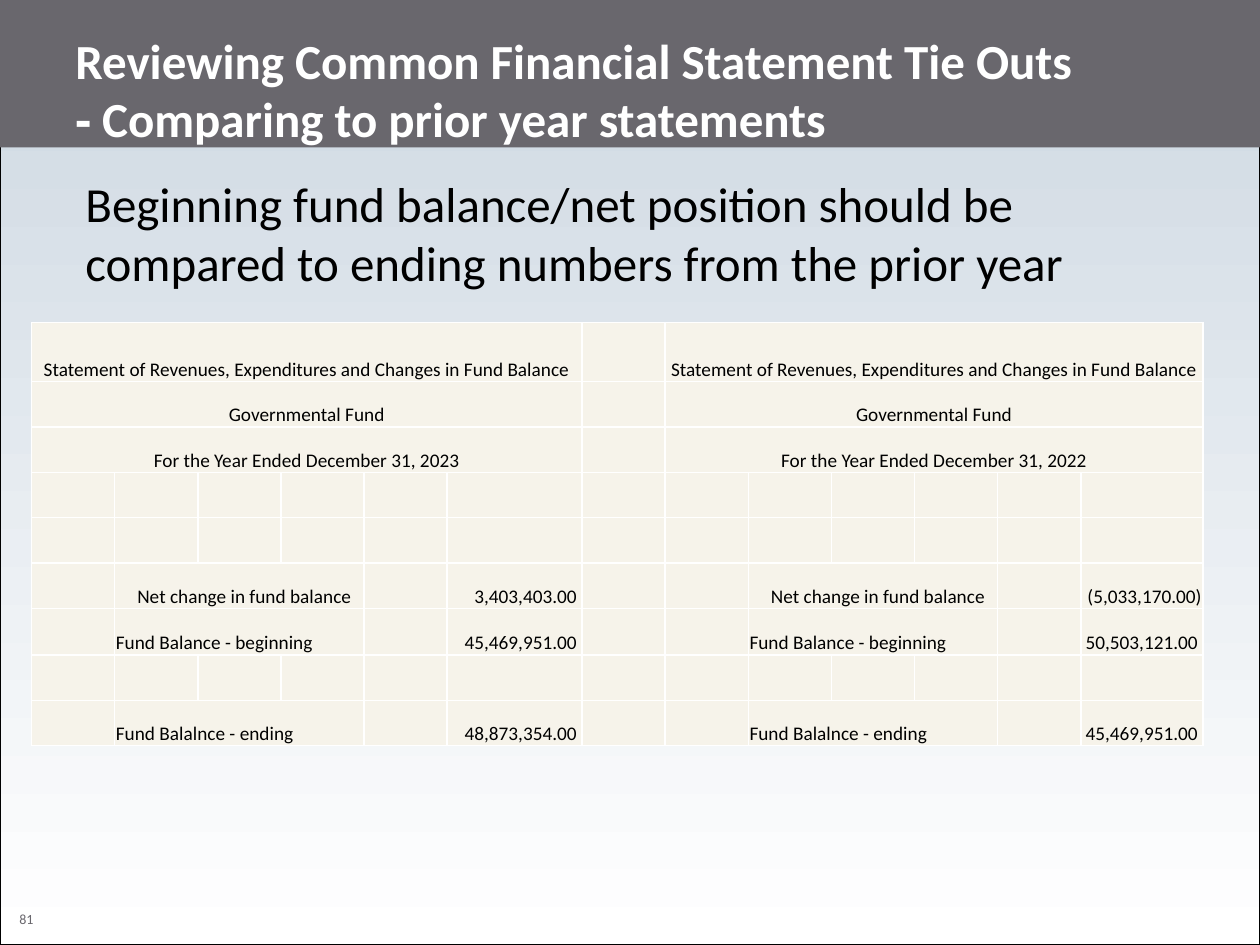
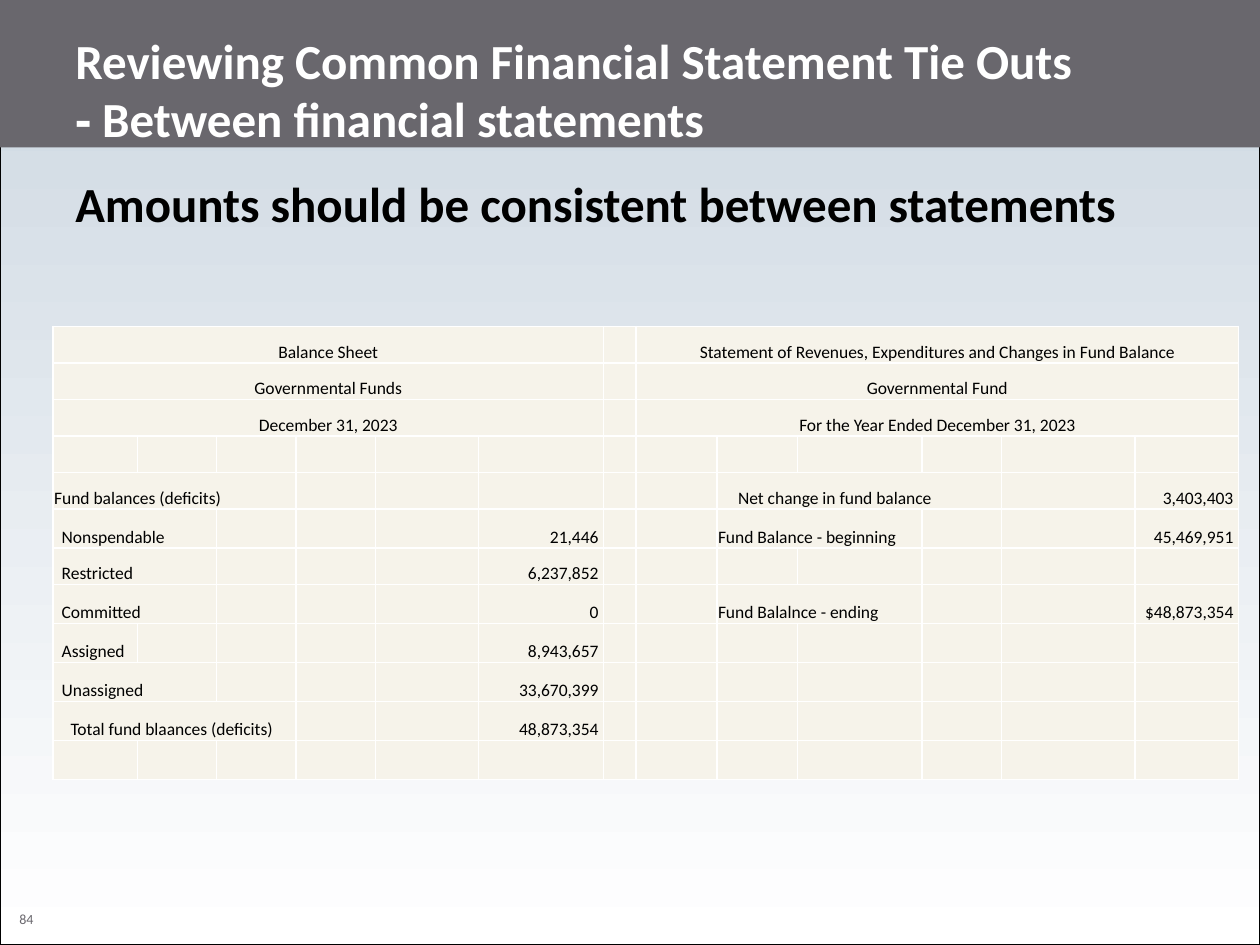
from lxml import etree
from pptx import Presentation
from pptx.dml.color import RGBColor
from pptx.enum.shapes import MSO_SHAPE as SHAPE
from pptx.enum.text import MSO_ANCHOR as ANCHOR, PP_ALIGN as ALIGN
from pptx.oxml import parse_xml
from pptx.oxml.ns import nsdecls, qn
from pptx.util import Inches, Pt

COLORS = {"sky": "CCD7E1", "white": "FFFFFF", "band": "69676D",
          "black": "000000", "cell": "F6F3EA"}
RGB = {name: RGBColor.from_string(value) for name, value in COLORS.items()}
FONT = "Calibri"
STATEMENT = "Statement of Revenues, Expenditures and Changes in Fund Balance"
HALF_COLS = 6  # columns of one statement; a spacer column divides the two


def style(p, size, color, bold=False, align=ALIGN.LEFT):
    """Format every run of a paragraph."""
    p.alignment = align
    for r in p.runs:
        r.font.name, r.font.size, r.font.bold = FONT, Pt(size), bold
        r.font.color.rgb = RGB[color]


def add_text(s, box, text, size, color, bold=False, align=ALIGN.LEFT, anchor=ANCHOR.TOP):
    tf = s.shapes.add_textbox(*map(Inches, box)).text_frame
    tf.word_wrap = True
    tf.vertical_anchor = anchor
    p = tf.paragraphs[0]
    p.text = text
    style(p, size, color, bold, align)


# A statement is its headings and its lines; a line is
# (row, first column, columns spanned, label, indent, amount).
slides = [
    {
        "number": "81",
        "subtitle": "Comparing to prior year statements",
        "message": "Beginning fund balance/net position should be "
                   "compared to ending numbers from the prior year",
        "message_left": 0.58, "message_bold": False,
        "table_at": (0.25, 2.56), "size": 11,
        "cols": [0.66] * 5 + [1.07] + [0.66] * 6 + [0.97],
        "rows": [0.47] + [0.36] * 5 + [0.37] + [0.36] * 2,
        "statements": [
            ([STATEMENT, "Governmental Fund", "For the Year Ended December 31, 2023"],
             [(5, 1, 3, "Net change in fund balance", 0.17, "3,403,403.00"),
              (6, 1, 3, "Fund Balance - beginning", 0, "45,469,951.00"),
              (8, 1, 3, "Fund Balalnce - ending", 0, "48,873,354.00")]),
            ([STATEMENT, "Governmental Fund", "For the Year Ended December 31, 2022"],
             [(5, 1, 3, "Net change in fund balance", 0.17, "(5,033,170.00)"),
              (6, 1, 3, "Fund Balance - beginning", 0, "50,503,121.00"),
              (8, 1, 3, "Fund Balalnce - ending", 0, "45,469,951.00")]),
        ],
    },
    {
        "number": "84",
        "subtitle": "Between financial statements",
        "message": "Amounts should be consistent between statements",
        "message_left": 0.5, "message_bold": True,
        "table_at": (0.42, 2.59), "size": 10,
        "cols": [0.67, 0.63, 0.63, 0.63, 0.82, 0.99, 0.26,
                 0.64, 0.64, 0.99, 0.63, 1.06, 0.82],
        "rows": [0.29] * 5 + [0.31, 0.29] + [0.31] * 5,
        "statements": [
            (["Balance Sheet", "Governmental Funds", "December 31, 2023"],
             [(4, 0, 3, "Fund balances (deficits)", 0, ""),
              (5, 0, 2, "Nonspendable", 0.06, "21,446"),
              (6, 0, 2, "Restricted", 0.06, "6,237,852"),
              (7, 0, 2, "Committed", 0.06, "0"),
              (8, 0, 1, "Assigned", 0.06, "8,943,657"),
              (9, 0, 2, "Unassigned", 0.06, "33,670,399"),
              (10, 0, 3, "Total fund blaances (deficits)", 0.13, "48,873,354")]),
            ([STATEMENT, "Governmental Fund", "For the Year Ended December 31, 2023"],
             [(4, 1, 3, "Net change in fund balance", 0.16, "3,403,403"),
              (5, 1, 2, "Fund Balance - beginning", 0, "45,469,951"),
              (7, 1, 2, "Fund Balalnce - ending", 0, "$48,873,354")]),
        ],
    },
]

prs = Presentation()
prs.slide_width, prs.slide_height = Inches(10), Inches(7.5)

for data in slides:
    s = prs.slides.add_slide(prs.slide_layouts[6])

    # Background, frame, title band and page number
    fill = s.background.fill
    fill.gradient()
    fill.gradient_angle = 270
    for stop, name, position in zip(fill.gradient_stops, ("sky", "white"), (0, 1)):
        stop.color.rgb = RGB[name]
        stop.position = position

    frame = s.shapes.add_shape(SHAPE.RECTANGLE, 0, 0, prs.slide_width, prs.slide_height)
    frame.shadow.inherit = False
    frame.fill.background()
    frame.line.color.rgb = RGB["black"]
    frame.line.width = Pt(0.75)

    band = s.shapes.add_shape(SHAPE.RECTANGLE, 0, 0, prs.slide_width, Inches(1.17))
    band.shadow.inherit = False
    band.fill.solid()
    band.fill.fore_color.rgb = RGB["band"]
    band.line.fill.background()

    add_text(s, (0, 7.18, 0.42, 0.24), data["number"], 8, "band", align=ALIGN.CENTER)
    add_text(s, (0.5, 0.33, 9, 0.75),
             "Reviewing Common Financial Statement Tie Outs\v‐ " + data["subtitle"],
             28, "white", bold=True, anchor=ANCHOR.MIDDLE)
    add_text(s, (data["message_left"], 1.33, 9, 1.1), data["message"],
             28, "black", bold=data["message_bold"])

    # Table grid
    cols, rows, size = data["cols"], data["rows"], data["size"]
    left, top = data["table_at"]
    table = s.shapes.add_table(len(rows), len(cols), Inches(left), Inches(top),
                               Inches(sum(cols)), Inches(sum(rows))).table
    table.first_row = table.horz_banding = False
    for col, width in zip(table.columns, cols):
        col.width = Inches(width)
    for row, height in zip(table.rows, rows):
        row.height = Inches(height)
    for cell in table.iter_cells():
        cell.margin_left = cell.margin_right = cell.margin_top = Inches(0.01)
        cell.margin_bottom = 0
        cell.vertical_anchor = ANCHOR.BOTTOM
        tcPr = cell._tc.get_or_add_tcPr()
        for side in "LRTB":
            ln = parse_xml(f'<a:ln{side} {nsdecls("a")} w="12700"/>')
            solid = etree.SubElement(ln, qn("a:solidFill"))
            etree.SubElement(solid, qn("a:srgbClr"), val=COLORS["white"])
            tcPr.append(ln)
        cell.fill.solid()
        cell.fill.fore_color.rgb = RGB["cell"]
        # Keeps empty cells from stretching their rows
        end = cell.text_frame.paragraphs[0]._p.get_or_add_endParaRPr()
        end.set("sz", str(size * 100))

    # Two statements side by side
    for half, (headings, lines) in enumerate(data["statements"]):
        first = half * (HALF_COLS + 1)
        last = first + HALF_COLS - 1
        for i, heading in enumerate(headings):
            cell = table.cell(i, first)
            cell.merge(table.cell(i, last))
            p = cell.text_frame.paragraphs[0]
            p.text = heading
            style(p, size, "black", align=ALIGN.CENTER)
        for row, start, span, label, indent, amount in lines:
            cell = table.cell(row, first + start)
            if span > 1:
                cell.merge(table.cell(row, first + start + span - 1))
            cell.margin_left = Inches(0.01 + indent)
            p = cell.text_frame.paragraphs[0]
            p.text = label
            style(p, size, "black")
            if amount:
                cell = table.cell(row, last)
                # A closing bracket hangs to the right of the digits
                cell.margin_right = Inches(0.01 if amount.endswith(")") else 0.04)
                p = cell.text_frame.paragraphs[0]
                p.text = amount
                style(p, size, "black", align=ALIGN.RIGHT)

prs.save("out.pptx")
